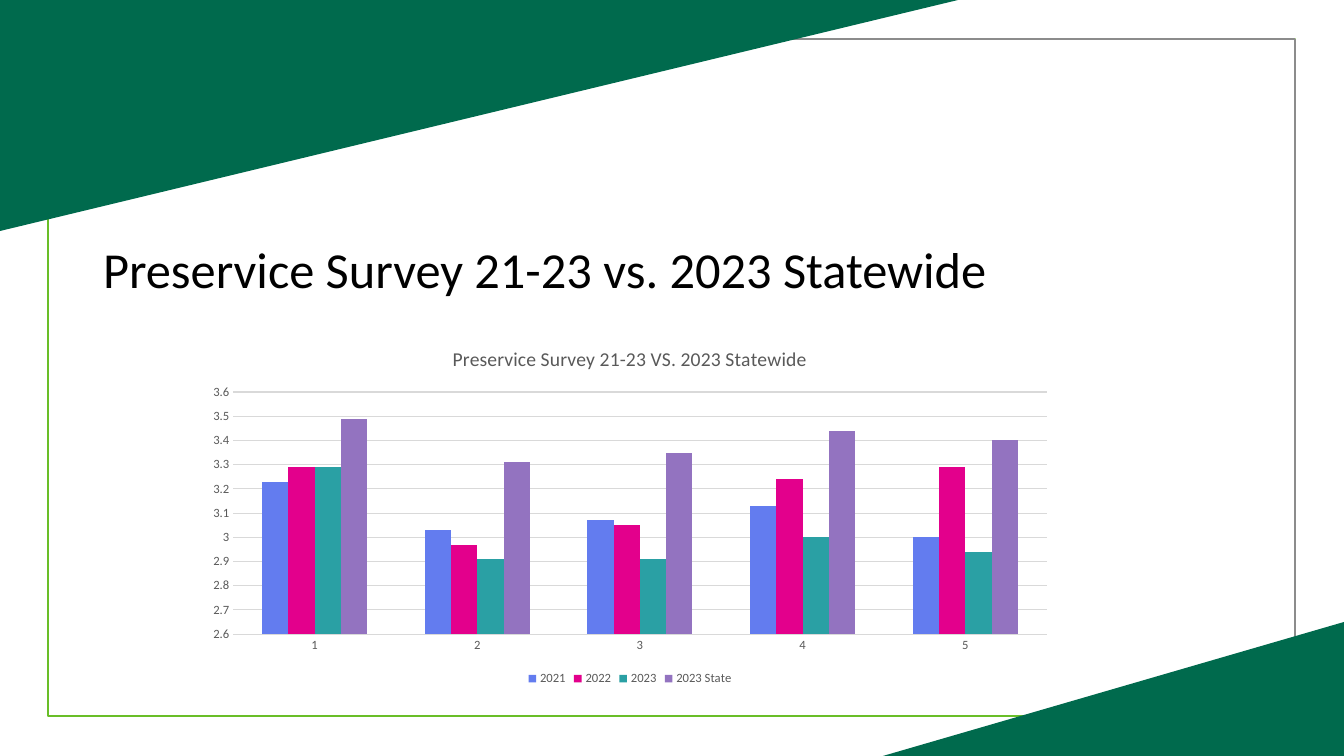
from lxml import etree
from pptx import Presentation
from pptx import util as u
from pptx.chart.data import CategoryChartData
from pptx.dml.color import RGBColor
from pptx.enum import chart as ch, shapes, text
from pptx.oxml.ns import qn

PX = 12700 * 72 / 100.8
THEME = {
    "font": "Calibri", "ink": "000000", "label": "595959", "grid": "D9D9D9",
    "band": "006A4D", "frame": "69BE28", "edge": "8C8C8C",
    "bars": ["637CEF", "E3008C", "2AA0A4", "9373C0"],
    "title": 36, "head": 14, "small": 9,
}


def px(*vals):
    return [u.Emu(round(v * PX)) for v in vals]


def style(font, size, color):
    font.name, font.size, font.bold = THEME["font"], u.Pt(size), False
    font.color.rgb = RGBColor.from_string(THEME[color])


deck = Presentation()
deck.slide_width, deck.slide_height = px(1344, 756)
slide = deck.slides.add_slide(deck.slide_layouts[5])
parts = slide.shapes

# Frame, with grey top and right edges
left, top, right, base = 48, 39, 1295, 716
frame = parts.add_shape(shapes.MSO_SHAPE.RECTANGLE,
                        *px(left, top, right - left, base - top))
frame.shadow.inherit = False
frame.fill.background()
frame.line.color.rgb = RGBColor.from_string(THEME["frame"])
frame.line.width = u.Pt(1)
for ends in [(left, top, right, top), (right, top, right, base)]:
    edge = parts.add_connector(shapes.MSO_CONNECTOR.STRAIGHT, *px(*ends))
    edge.line.color.rgb = RGBColor.from_string(THEME["edge"])
    edge.line.width = u.Pt(1)
    etree.SubElement(edge._element.spPr, qn("a:effectLst"))

# Corner bands
for first, *rest in [[(0, 0), (958, 0), (0, 231)],
                     [(1344, 756), (883, 756), (1344, 622)]]:
    path = parts.build_freeform(*first, scale=PX)
    path.add_line_segments(rest, close=True)
    band = path.convert_to_shape()
    band.shadow.inherit = False
    band.fill.solid()
    band.fill.fore_color.rgb = RGBColor.from_string(THEME["band"])
    band.line.fill.background()

# Title
title = parts.title
title.left, title.top, title.width, title.height = px(93, 240, 1159, 89)
frame = title.text_frame
frame.text = "Preservice Survey 21-23 vs. 2023 Statewide"
frame.word_wrap = True
frame.auto_size = text.MSO_AUTO_SIZE.NONE
frame.vertical_anchor = text.MSO_ANCHOR.TOP
para = frame.paragraphs[0]
para.alignment = text.PP_ALIGN.LEFT
para.line_spacing = 0.9
style(para.font, THEME["title"], "ink")

# Survey chart
data = CategoryChartData()
data.categories = ["1", "2", "3", "4", "5"]
data.add_series("2021", [3.23, 3.03, 3.07, 3.13, 3])
data.add_series("2022", [3.29, 2.97, 3.05, 3.24, 3.29])
data.add_series("2023", [3.29, 2.91, 2.91, 3, 2.94])
data.add_series("2023 State", [3.49, 3.31, 3.35, 3.44, 3.4])
chart = parts.add_chart(ch.XL_CHART_TYPE.COLUMN_CLUSTERED,
                        *px(196, 329, 868, 361), data).chart
style(chart.font, THEME["small"], "label")
chart.has_title = True
head = chart.chart_title.text_frame
head.text = "Preservice Survey 21-23 VS. 2023 Statewide"
style(head.paragraphs[0].font, THEME["head"], "label")
chart.chart_title.include_in_layout = False

# Bars
plot = chart.plots[0]
plot.gap_width, plot.overlap = 219, 0
plot.vary_by_categories = False
for row, color in zip(plot.series, THEME["bars"]):
    row.format.fill.solid()
    row.format.fill.fore_color.rgb = RGBColor.from_string(color)

# Axes and legend
cat, val = chart.category_axis, chart.value_axis
val.minimum_scale, val.maximum_scale, val.major_unit = 2.6, 3.6, 0.1
val.tick_labels.number_format = "General"
val.tick_labels.number_format_is_linked = False
val.format.line.fill.background()
for axis in (cat, val):
    axis.major_tick_mark = axis.minor_tick_mark = ch.XL_TICK_MARK.NONE
    style(axis.tick_labels.font, THEME["small"], "label")
for line in (cat.format.line, val.major_gridlines.format.line):
    line.color.rgb = RGBColor.from_string(THEME["grid"])
    line.width = u.Pt(0.75)
chart.has_legend = True
chart.legend.position = ch.XL_LEGEND_POSITION.BOTTOM
chart.legend.include_in_layout = False
style(chart.legend.font, THEME["small"], "label")

deck.save("out.pptx")
